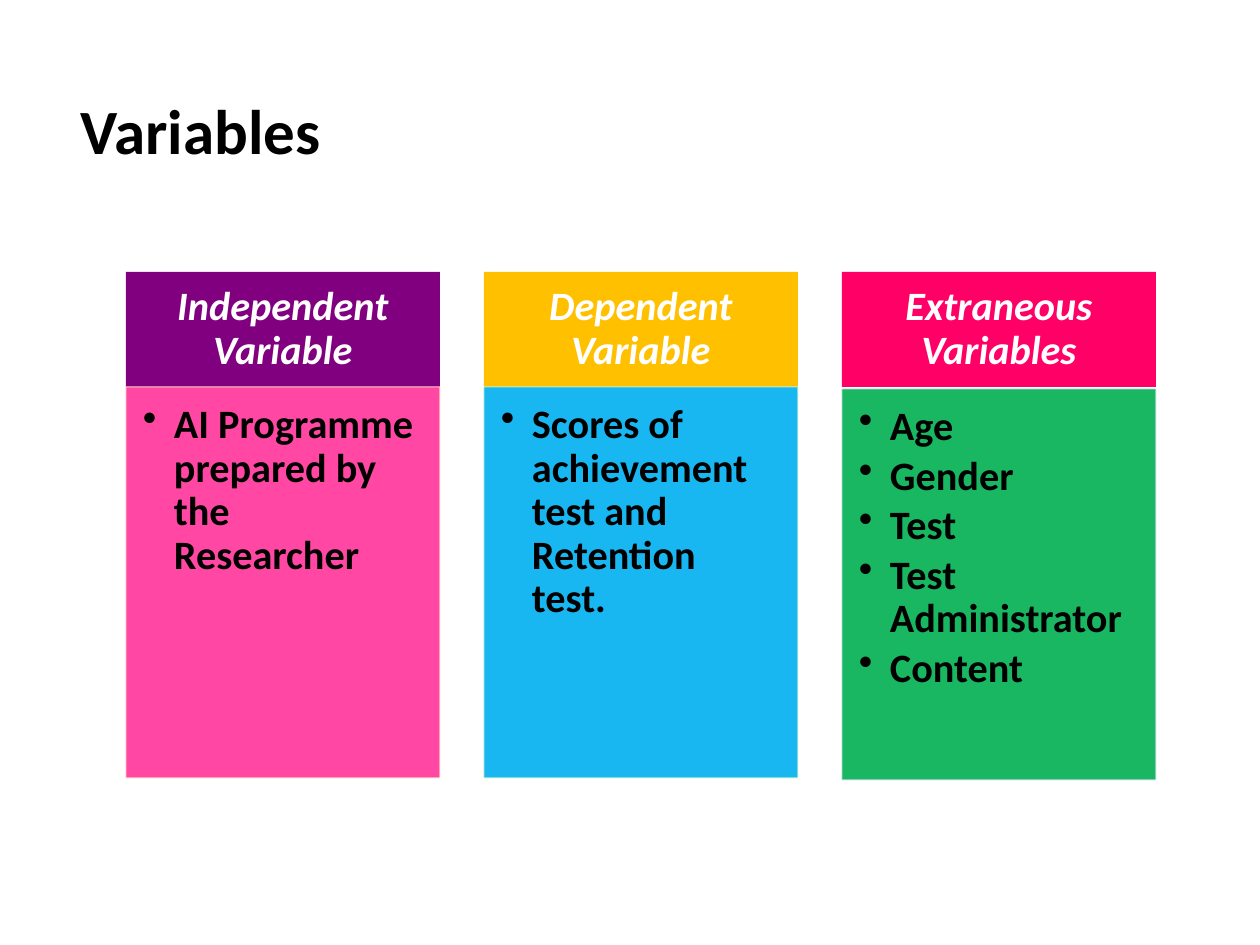
from dataclasses import dataclass

from lxml.etree import SubElement
from pptx import Presentation
from pptx.dml.color import RGBColor
from pptx.enum.shapes import MSO_SHAPE as Preset
from pptx.enum.text import MSO_ANCHOR as Anchor, PP_ALIGN as Align
from pptx.oxml.ns import qn
from pptx.util import Emu, Inches, Pt

PX_PER_INCH = 126
SLIDE_WIDTH, SLIDE_HEIGHT = 1260, 945
FONT = "Calibri"
TITLE_SIZE, TEXT_SIZE = 36, 23

COLUMN_LEFT, COLUMN_PITCH, COLUMN_WIDTH = 126, 358, 314
HEADING_TOP, HEADING_HEIGHT = 272, 115
PANEL_HEIGHT = 391
BULLET_INDENT = 31
PANEL_OPACITY = 90

BLACK = RGBColor(0x00, 0x00, 0x00)
WHITE = RGBColor(0xFF, 0xFF, 0xFF)
PURPLE = RGBColor(0x80, 0x00, 0x80)
PINK = RGBColor(0xFF, 0x33, 0x99)
CREAM = RGBColor(0xFF, 0xE8, 0xCC)
AMBER = RGBColor(0xFF, 0xC0, 0x00)
BLUE = RGBColor(0x00, 0xB0, 0xF0)
MINT = RGBColor(0xCF, 0xF8, 0xD1)
CRIMSON = RGBColor(0xFF, 0x00, 0x66)
GREEN = RGBColor(0x00, 0xB0, 0x50)
ICE = RGBColor(0xD2, 0xDF, 0xF0)


@dataclass(frozen=True)
class VariableColumn:
    heading: str
    items: tuple[str, ...]
    heading_fill: RGBColor
    panel_fill: RGBColor
    panel_line: RGBColor
    panel_top: int = 387


COLUMNS = (
    VariableColumn("Independent Variable", ("AI Programme prepared by the Researcher",),
                   PURPLE, PINK, CREAM),
    VariableColumn("Dependent Variable", ("Scores of achievement test and Retention test.",),
                   AMBER, BLUE, MINT),
    VariableColumn("Extraneous Variables",
                   ("Age", "Gender", "Test", "Test Administrator", "Content"),
                   CRIMSON, GREEN, ICE, panel_top=389),
)


def px(length: int) -> Emu:
    return Emu(round(length * Inches(1) / PX_PER_INCH))


def place(shape, left: int, top: int, width: int, height: int) -> None:
    shape.left, shape.top = px(left), px(top)
    shape.width, shape.height = px(width), px(height)


def add_text(paragraph, text: str, size: int, color: RGBColor, italic: bool = False) -> None:
    paragraph.line_spacing = 0.9
    run = paragraph.add_run()
    run.text = text
    run.font.name = FONT
    run.font.size = Pt(size)
    run.font.bold = True
    run.font.italic = italic
    run.font.color.rgb = color


def add_box(slide, left: int, top: int, height: int, fill: RGBColor,
            anchor: Anchor, insets: tuple[int, int, int, int]):
    """Add a column-wide rectangle; insets run left, top, right, bottom."""
    box = slide.shapes.add_shape(Preset.RECTANGLE, px(left), px(top),
                                 px(COLUMN_WIDTH), px(height))
    box.shadow.inherit = False
    box.fill.solid()
    box.fill.fore_color.rgb = fill
    frame = box.text_frame
    frame.word_wrap = True
    frame.vertical_anchor = anchor
    (frame.margin_left, frame.margin_top,
     frame.margin_right, frame.margin_bottom) = map(px, insets)
    return box


def add_heading(slide, left: int, column: VariableColumn) -> None:
    box = add_box(slide, left, HEADING_TOP, HEADING_HEIGHT, column.heading_fill,
                  Anchor.MIDDLE, (22, 13, 22, 13))
    box.line.fill.background()
    paragraph = box.text_frame.paragraphs[0]
    paragraph.alignment = Align.CENTER
    add_text(paragraph, column.heading, TEXT_SIZE, WHITE, italic=True)


def add_panel(slide, left: int, column: VariableColumn) -> None:
    box = add_box(slide, left, column.panel_top, PANEL_HEIGHT, column.panel_fill,
                  Anchor.TOP, (17, 17, 22, 25))
    box.line.color.rgb = column.panel_line
    box.line.width = Pt(0.5)
    for color in box._element.spPr.iter(qn("a:srgbClr")):
        SubElement(color, qn("a:alpha"), val=str(PANEL_OPACITY * 1000))
    frame = box.text_frame
    for index, item in enumerate(column.items):
        paragraph = frame.add_paragraph() if index else frame.paragraphs[0]
        paragraph.alignment = Align.LEFT
        paragraph.space_after = Pt(3.5)
        add_text(paragraph, item, TEXT_SIZE, BLACK)
        add_bullet(paragraph)


def add_bullet(paragraph) -> None:
    properties = paragraph._p.get_or_add_pPr()
    properties.set("marL", str(px(BULLET_INDENT)))
    properties.set("indent", str(-px(BULLET_INDENT)))
    SubElement(properties, qn("a:buChar"), char="•")


def add_title(slide, text: str) -> None:
    title = slide.shapes.title
    place(title, 68, 69, 1114, 131)
    title.text_frame.vertical_anchor = Anchor.MIDDLE
    paragraph = title.text_frame.paragraphs[0]
    paragraph.alignment = Align.LEFT
    add_text(paragraph, text, TITLE_SIZE, BLACK)


def main() -> None:
    presentation = Presentation()
    presentation.slide_width = px(SLIDE_WIDTH)
    presentation.slide_height = px(SLIDE_HEIGHT)
    title_only = presentation.slide_layouts.get_by_name("Title Only")
    slide = presentation.slides.add_slide(title_only)
    add_title(slide, "Variables")
    for index, column in enumerate(COLUMNS):
        left = COLUMN_LEFT + index * COLUMN_PITCH
        add_heading(slide, left, column)
        add_panel(slide, left, column)
    presentation.save("out.pptx")


if __name__ == "__main__":
    main()
